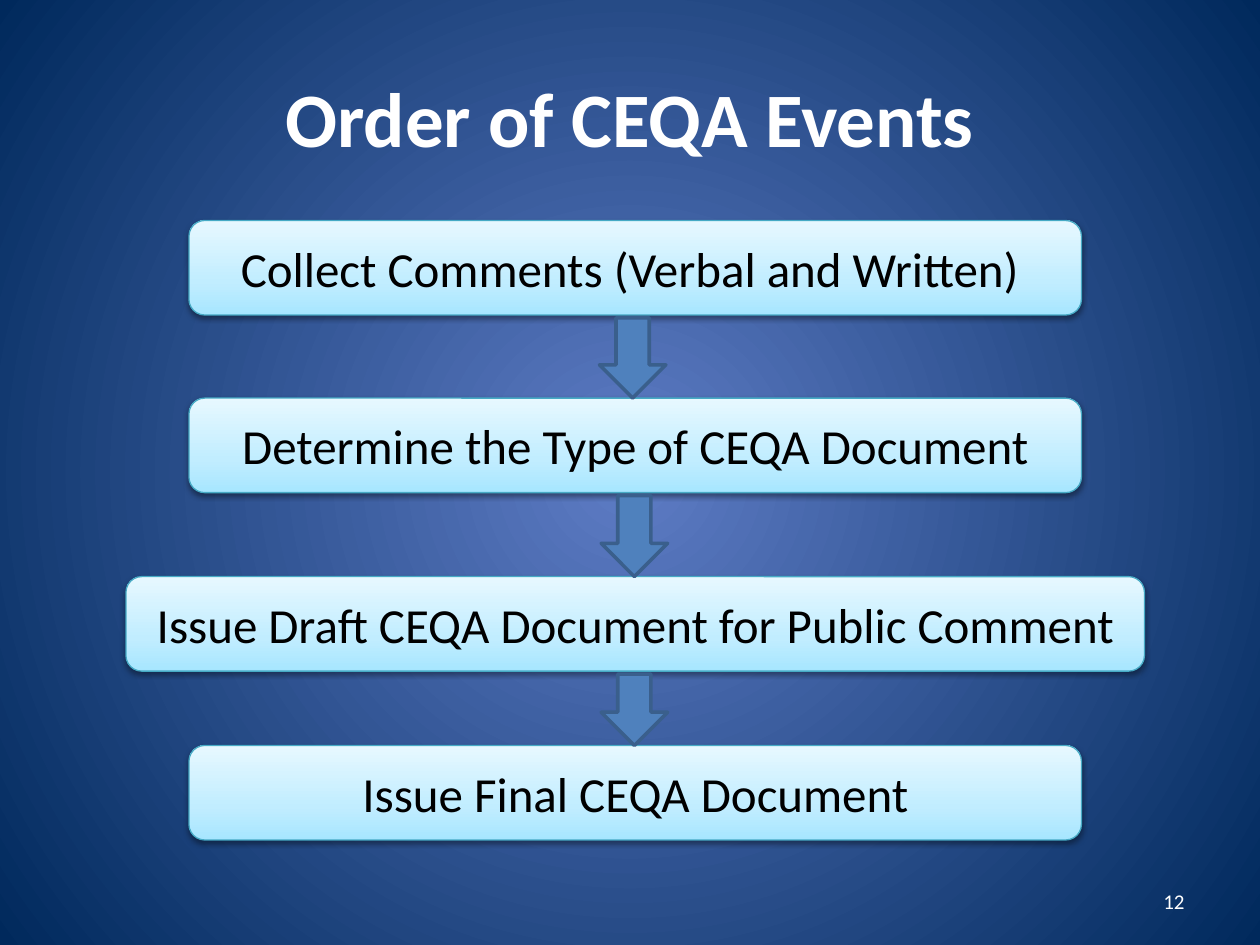
"""Build the CEQA events flow slide."""
from lxml import etree
from pptx import Presentation
from pptx.dml.color import RGBColor
from pptx.enum.shapes import MSO_SHAPE
from pptx.enum.text import MSO_ANCHOR, PP_ALIGN
from pptx.oxml import parse_xml
from pptx.oxml.ns import nsdecls, qn
from pptx.util import Pt

BOX, ARROW = MSO_SHAPE.ROUNDED_RECTANGLE, MSO_SHAPE.DOWN_ARROW
MID = MSO_ANCHOR.MIDDLE
CENTER, RIGHT = PP_ALIGN.CENTER, PP_ALIGN.RIGHT
WHITE = RGBColor(0xFF, 0xFF, 0xFF)
BLACK = RGBColor(0x00, 0x00, 0x00)
GLOW = RGBColor(0x5E, 0x7C, 0xC5)
NAVY = RGBColor(0x00, 0x29, 0x5C)
SKY = RGBColor(0xA7, 0xE6, 0xFF)
PALE = RGBColor(0xC1, 0xED, 0xFF)
ICE = RGBColor(0xE7, 0xF8, 0xFF)
TEAL = RGBColor(0x46, 0xAA, 0xC5)
BLUE = RGBColor(0x4F, 0x81, 0xBD)
STEEL = RGBColor(0x3A, 0x5F, 0x8C)
SHADOW = (
    f'<a:outerShdw {nsdecls("a")} blurRad="{Pt(3.1)}" dist="{Pt(1.6)}" dir="5400000" '
    f'rotWithShape="0"><a:srgbClr val="{BLACK}"><a:alpha val="38000"/></a:srgbClr></a:outerShdw>'
)
RADIAL = (
    f'<a:path {nsdecls("a")} path="circle">'
    '<a:fillToRect l="50000" t="50000" r="50000" b="50000"/></a:path>'
)
UPWARD = f'<a:lin {nsdecls("a")} ang="16200000" scaled="0"/>'


def blend(fill, owner, stops, shade):
    fill.gradient()
    grad = next(owner.iter(qn("a:gradFill")))
    for child in list(grad):
        grad.remove(child)
    group = etree.SubElement(grad, qn("a:gsLst"))
    for pos, color in stops:
        stop = etree.SubElement(group, qn("a:gs"), pos=str(pos * 1000))
        etree.SubElement(stop, qn("a:srgbClr"), val=str(color))
    grad.append(parse_xml(shade))


def write(shape, text, size, color, align=CENTER, bold=False):
    frame = shape.text_frame
    frame.word_wrap = True
    frame.vertical_anchor = MID
    para = frame.paragraphs[0]
    para.alignment = align
    run = para.add_run()
    run.text = text
    style = {"name": "Calibri", "size": Pt(size), "bold": bold}
    for key, value in style.items():
        setattr(run.font, key, value)
    run.font.color.rgb = color


deck = Presentation()
deck.slide_width, deck.slide_height = Pt(720), Pt(540)
slide = deck.slides.add_slide(deck.slide_layouts[6])
shapes = slide.shapes
blend(slide.background.fill, slide.element, [(0, GLOW), (100, NAVY)], RADIAL)

title = shapes.add_textbox(Pt(36), Pt(21.6), Pt(648), Pt(90))
write(title, "Order of CEQA Events", 44, WHITE, bold=True)

steps = [
    ("Collect Comments (Verbal and Written) ", 126, 510),
    ("Determine the Type of CEQA Document", 227.5, 510),
    ("Issue Draft CEQA Document for Public Comment", 329.5, 582),
    ("Issue Final CEQA Document", 426, 510),
]
for text, top, width in steps:
    box = shapes.add_shape(BOX, Pt(363 - width / 2), Pt(top), Pt(width), Pt(54))
    blend(box.fill, box.element, [(0, SKY), (35, PALE), (100, ICE)], UPWARD)
    box.line.color.rgb = TEAL
    box.line.width = Pt(0.75)
    box.shadow.inherit = False
    box.element.spPr.find(qn("a:effectLst")).append(parse_xml(SHADOW))
    write(box, text, 28, BLACK)

for left, step, after in zip((342.5, 343.5, 343.5), steps, steps[1:]):
    top = step[1] + 55.7
    arrow = shapes.add_shape(ARROW, Pt(left), Pt(top), Pt(38), Pt(after[1] - top))
    arrow.fill.solid()
    arrow.fill.fore_color.rgb = BLUE
    arrow.line.color.rgb = STEEL
    arrow.line.width = Pt(2)
    arrow.shadow.inherit = False

number = shapes.add_textbox(Pt(516), Pt(500.5), Pt(168), Pt(28.75))
write(number, "12", 12, WHITE, RIGHT)

deck.save("out.pptx")
